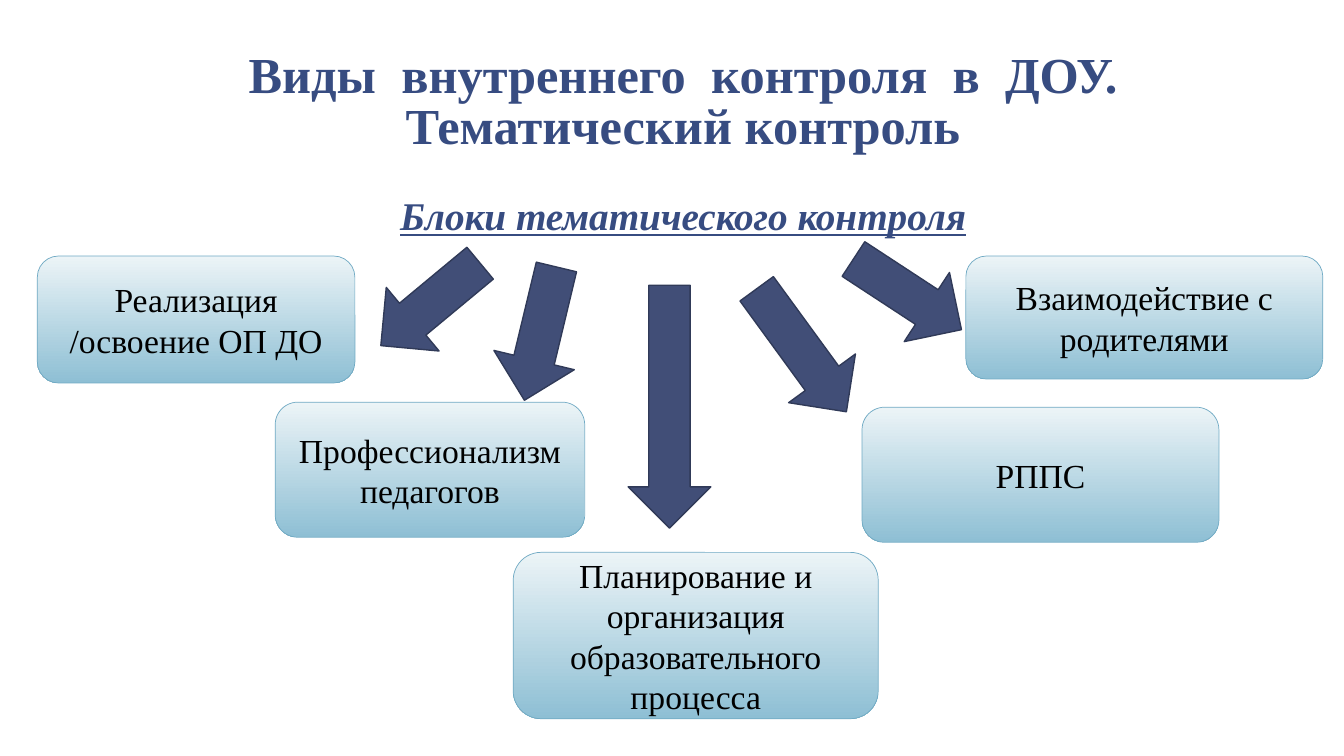
from pptx import Presentation
from pptx.dml.color import RGBColor
from pptx.enum.shapes import MSO_SHAPE
from pptx.enum.text import MSO_ANCHOR, MSO_AUTO_SIZE, PP_ALIGN
from pptx.util import Inches, Pt

BOX = MSO_SHAPE.ROUNDED_RECTANGLE
ARROW = MSO_SHAPE.DOWN_ARROW
MIDDLE = MSO_ANCHOR.MIDDLE
BOTTOM = MSO_ANCHOR.BOTTOM
CENTER = PP_ALIGN.CENTER
FIXED = MSO_AUTO_SIZE.NONE

NAVY = RGBColor(0x37, 0x4C, 0x81)
SLATE = RGBColor(0x41, 0x4E, 0x77)
EDGE = RGBColor(0x30, 0x3A, 0x58)
PALE = RGBColor(0xEC, 0xF4, 0xF7)
BLUE = RGBColor(0x8E, 0xBF, 0xD4)
RIM = RGBColor(0x70, 0xAA, 0xC4)
BLACK = RGBColor(0, 0, 0)
FONT = "Times New Roman"

TITLE = "Виды внутреннего контроля в ДОУ."
TOPIC = "Тематический контроль"
HEAD = "Блоки тематического контроля"
BLOCKS = [
    ("Реализация /освоение ОП ДО", 0.37, 2.54, 3.15, 1.26),
    ("Профессионализм педагогов", 2.73, 3.99, 3.07, 1.34),
    ("Планирование и организация образовательного процесса", 5.09, 5.48, 3.62, 1.65),
    ("РППС", 8.55, 4.04, 3.54, 1.34),
    ("Взаимодействие с родителями", 9.58, 2.54, 3.54, 1.22),
]
ARROWS = [
    (3.86, 2.38, 1.28, 50.3),
    (4.95, 2.63, 1.36, 13.5),
    (6.23, 2.83, 2.41, 0),
    (7.54, 2.72, 1.51, 323.9),
    (8.59, 2.28, 1.28, 303.2),
]
THICK = 0.82
LEFT, WIDE = 1.22, 11.11


def style(para, size, color, bold=False):
    para.alignment = CENTER
    for run in para.runs:
        font = run.font
        font.name, font.size, font.bold = FONT, Pt(size), bold
        font.color.rgb = color


def pad(frame):
    frame.word_wrap = True
    frame.auto_size = FIXED
    frame.margin_left = frame.margin_right = Inches(0.13)
    frame.margin_top = frame.margin_bottom = Inches(0.07)


def add_title(slide):
    title = slide.shapes.title
    title.left, title.top = Inches(LEFT), Inches(0.08)
    title.width, title.height = Inches(WIDE), Inches(1.53)
    frame = title.text_frame
    pad(frame)
    frame.vertical_anchor = BOTTOM
    para = frame.paragraphs[0]
    para.line_spacing = 0.85
    for i, word in enumerate(TITLE.split()):
        if i:
            gap = para.add_run()
            gap.text = " "
            gap.font._element.set("spc", "900")
        para.add_run().text = word
    para.add_line_break()
    para.add_run().text = TOPIC
    style(para, 36, NAVY, True)


def add_head(slide):
    box = slide.shapes.add_textbox(Inches(LEFT), Inches(1.86), Inches(WIDE), Inches(0.6))
    frame = box.text_frame
    pad(frame)
    frame.text = HEAD
    para = frame.paragraphs[0]
    para.line_spacing = 0.95
    style(para, 28, NAVY, True)
    font = para.runs[0].font
    font.italic = font.underline = True


def add_shape(slide, kind, place, color, width):
    shape = slide.shapes.add_shape(kind, *map(Inches, place))
    shape.shadow.inherit = False
    shape.line.color.rgb = color
    shape.line.width = Pt(width)
    return shape


def add_block(slide, text, *place):
    shape = add_shape(slide, BOX, place, RIM, 0.5)
    fill = shape.fill
    fill.gradient()
    fill.gradient_angle = 270
    for stop, color in zip(fill.gradient_stops, (PALE, BLUE)):
        stop.color.rgb = color
    frame = shape.text_frame
    frame.word_wrap = True
    frame.vertical_anchor = MIDDLE
    frame.text = text
    style(frame.paragraphs[0], 24, BLACK)


def add_arrow(slide, left, top, length, turn):
    shape = add_shape(slide, ARROW, (left, top, THICK, length), EDGE, 1)
    shape.fill.solid()
    shape.fill.fore_color.rgb = SLATE
    shape.rotation = turn


def main():
    deck = Presentation()
    deck.slide_width, deck.slide_height = Inches(13.33), Inches(7.5)
    slide = deck.slides.add_slide(deck.slide_layouts[5])
    add_title(slide)
    add_head(slide)
    for block in BLOCKS:
        add_block(slide, *block)
    for arrow in ARROWS:
        add_arrow(slide, *arrow)
    deck.save("out.pptx")


if __name__ == "__main__":
    main()
